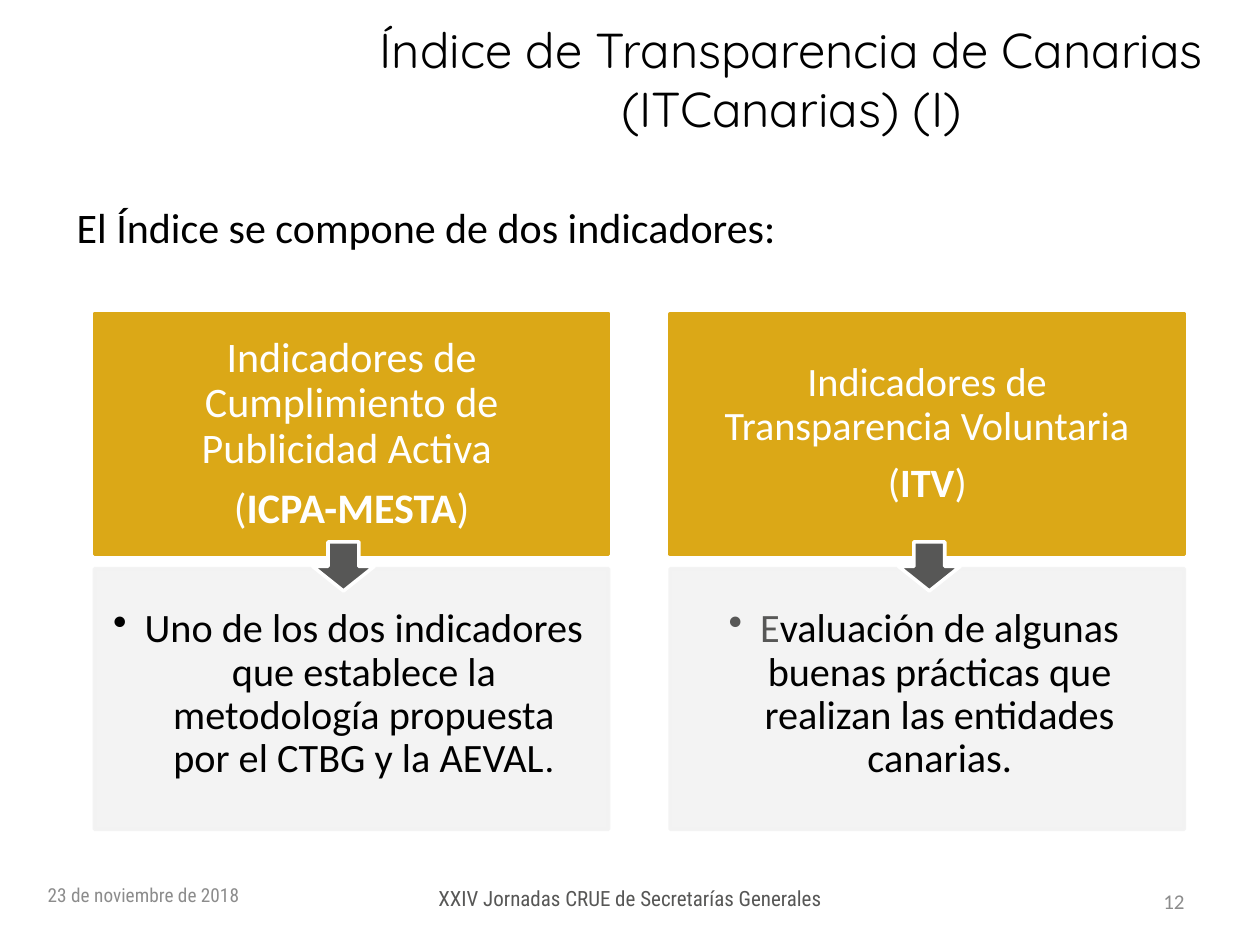
from dataclasses import dataclass

from lxml import etree
from pptx import Presentation
from pptx.dml.color import RGBColor
from pptx.enum import shapes, text
from pptx.oxml.ns import qn
from pptx.util import Pt


@dataclass(frozen=True)
class Theme:
    black: str = "000000"
    white: str = "FFFFFF"
    gold: str = "DBA817"
    pale: str = "F2F2F2"
    dark: str = "575756"
    grey: str = "8C8C8C"
    title_font: str = "Quicksand"
    body_font: str = "Calibri"
    footer_font: str = "Roboto Condensed"
    title_size: int = 28
    lead_size: int = 24
    body_size: int = 23
    footer_size: int = 12
    date_size: int = 11


THEME = Theme()
LEFT, CENTER, RIGHT = text.PP_ALIGN.LEFT, text.PP_ALIGN.CENTER, text.PP_ALIGN.RIGHT
TOP, MIDDLE = text.MSO_ANCHOR.TOP, text.MSO_ANCHOR.MIDDLE

TITLE = "Índice de Transparencia de Canarias (ITCanarias) (I)"

# text, box, alignment, anchor, font, size, colour
LABELS = [
    ("El Índice se compone de dos indicadores:", (36.7, 111.6, 423.4, 58.3),
     LEFT, TOP, THEME.body_font, THEME.lead_size, THEME.black),
    ("23 de noviembre de 2018", (20.2, 496.8, 167.8, 28.8),
     LEFT, MIDDLE, THEME.footer_font, THEME.date_size, THEME.grey),
    ("XXIV Jornadas CRUE de Secretarías Generales", (218.2, 502.6, 283.7, 22.3),
     CENTER, TOP, THEME.footer_font, THEME.footer_size, THEME.dark),
    ("12", (643.7, 500.4, 40.3, 28.8),
     RIGHT, MIDDLE, THEME.body_font, THEME.footer_size, THEME.grey),
]

# Description runs are (text, colour, font)
INDICATORS = [
    {"name": "Indicadores de Cumplimiento de Publicidad Activa ",
     "acronym": "ICPA-MESTA", "size": THEME.lead_size, "arrow_left": 178.6,
     "description": [
         ("Uno de los dos indicadores que establece la metodología propuesta "
          "por el CTBG y la AEVAL", THEME.black, THEME.body_font),
         (".", THEME.black, THEME.footer_font)]},
    {"name": "Indicadores de Transparencia Voluntaria",
     "acronym": "ITV", "size": THEME.body_size, "arrow_left": 513.4,
     "description": [
         ("E", THEME.dark, THEME.body_font),
         ("valuación de algunas buenas prácticas que realizan las entidades "
          "canarias.", THEME.black, THEME.body_font)]},
]

COLUMN_LEFT, COLUMN_STEP, COLUMN_WIDTH = 54, 329, 293.8
HEADER_TOP, HEADER_HEIGHT = 179.3, 137.5
DETAIL_TOP, DETAIL_HEIGHT = 325, 149
ARROW_TOP, ARROW_WIDTH, ARROW_HEIGHT = 309.6, 35.3, 28.1


def points(values):
    return [Pt(value) for value in values]


def style_font(font, name, size, color):
    font.name, font.size = name, Pt(size)
    font.color.rgb = RGBColor.from_string(color)


def add_block(slide, kind, box, fill, line):
    shape = slide.shapes.add_shape(kind, *points(box))
    shape.shadow.inherit = False
    shape.fill.solid()
    shape.fill.fore_color.rgb = RGBColor.from_string(fill)
    shape.line.color.rgb = RGBColor.from_string(line)
    shape.line.width = Pt(2)
    return shape


def set_margins(frame, left, top, right, bottom):
    frame.margin_left, frame.margin_top = Pt(left), Pt(top)
    frame.margin_right, frame.margin_bottom = Pt(right), Pt(bottom)
    frame.word_wrap = True
    frame.vertical_anchor = MIDDLE


def set_opacity(shape, percent):
    """Apply one opacity to the fill and the line."""
    for color in shape.element.spPr.iter(qn("a:srgbClr")):
        etree.SubElement(color, qn("a:alpha"), val=str(percent * 1000))


def add_bullet(paragraph, indent):
    properties = paragraph._p.get_or_add_pPr()
    properties.set("marL", str(Pt(indent)))
    properties.set("indent", str(-Pt(indent)))
    etree.SubElement(properties, qn("a:buChar"), char="•")


def space_paragraph(paragraph, after):
    paragraph.alignment = CENTER
    paragraph.line_spacing = 0.9
    paragraph.space_after = Pt(after)


def add_title(slide):
    title = slide.shapes.title
    title.left, title.top, title.width, title.height = points((184.3, 0, 535.7, 90))
    title.text_frame.text = TITLE
    title.text_frame.vertical_anchor = MIDDLE
    paragraph = title.text_frame.paragraphs[0]
    paragraph.alignment = CENTER
    style_font(paragraph.font, THEME.title_font, THEME.title_size, THEME.black)


def add_label(slide, wording, box, alignment, anchor, font, size, color):
    frame = slide.shapes.add_textbox(*points(box)).text_frame
    frame.word_wrap = True
    frame.vertical_anchor = anchor
    paragraph = frame.paragraphs[0]
    paragraph.text = wording
    paragraph.alignment = alignment
    style_font(paragraph.font, font, size, color)


def add_header(slide, left, indicator):
    header = add_block(slide, shapes.MSO_SHAPE.RECTANGLE,
                       (left, HEADER_TOP, COLUMN_WIDTH, HEADER_HEIGHT),
                       THEME.gold, THEME.gold)
    frame = header.text_frame
    set_margins(frame, 13.4, 7.6, 13.4, 7.6)
    name, acronym = frame.paragraphs[0], frame.add_paragraph()
    name.text = indicator["name"]
    for wording in ("(", indicator["acronym"], ")"):
        run = acronym.add_run()
        run.text = wording
        run.font.bold = wording == indicator["acronym"]
    for paragraph in (name, acronym):
        space_paragraph(paragraph, 0.35 * indicator["size"])
        style_font(paragraph.font, THEME.body_font, indicator["size"], THEME.white)


def add_detail(slide, left, indicator):
    detail = add_block(slide, shapes.MSO_SHAPE.RECTANGLE,
                       (left, DETAIL_TOP, COLUMN_WIDTH, DETAIL_HEIGHT),
                       THEME.pale, THEME.pale)
    set_opacity(detail, 90)
    set_margins(detail.text_frame, 9.4, 9.4, 13, 14.4)
    paragraph = detail.text_frame.paragraphs[0]
    paragraph.level = 1
    add_bullet(paragraph, 18)
    space_paragraph(paragraph, 0.15 * THEME.body_size)
    for wording, color, font in indicator["description"]:
        run = paragraph.add_run()
        run.text = wording
        style_font(run.font, font, THEME.body_size, color)


def main():
    presentation = Presentation()
    presentation.slide_width, presentation.slide_height = Pt(720), Pt(540)
    slide = presentation.slides.add_slide(presentation.slide_layouts[5])
    add_title(slide)
    for label in LABELS:
        add_label(slide, *label)
    for column, indicator in enumerate(INDICATORS):
        left = COLUMN_LEFT + column * COLUMN_STEP
        add_header(slide, left, indicator)
        add_detail(slide, left, indicator)
        add_block(slide, shapes.MSO_SHAPE.DOWN_ARROW,
                  (indicator["arrow_left"], ARROW_TOP, ARROW_WIDTH, ARROW_HEIGHT),
                  THEME.dark, THEME.white)
    presentation.save("out.pptx")


if __name__ == "__main__":
    main()
